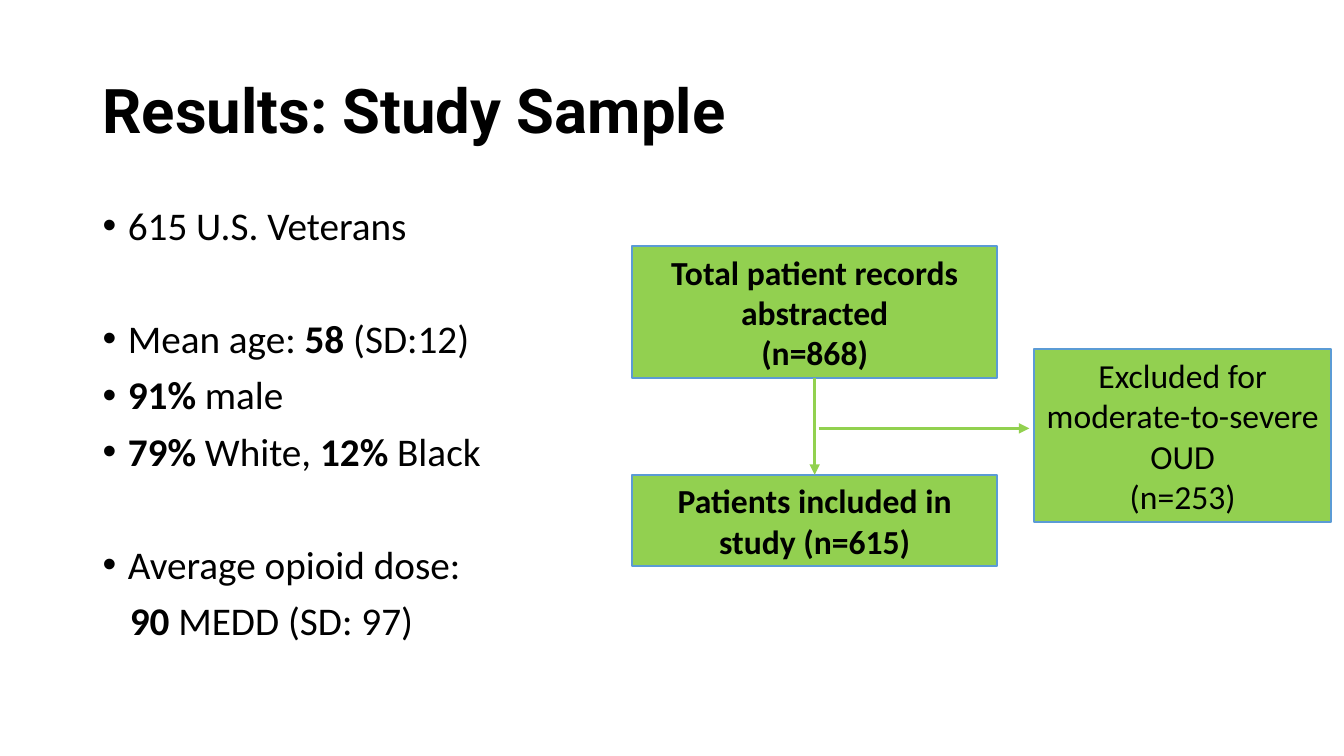
"""Build the study sample slide with its findings and patient flow diagram."""
from dataclasses import dataclass

import lxml.etree
import pptx
import pptx.dml.color
import pptx.enum.shapes
import pptx.enum.text
import pptx.oxml
import pptx.oxml.ns
import pptx.shapes.autoshape
import pptx.shapes.connector
import pptx.slide
import pptx.text.text
import pptx.util

Inches = pptx.util.Inches
Pt = pptx.util.Pt
RGBColor = pptx.dml.color.RGBColor


@dataclass(frozen=True)
class Theme:
    """Colours, fonts and type sizes of the slide."""
    text: RGBColor = RGBColor(0, 0, 0)
    box_fill: RGBColor = RGBColor(0x92, 0xD0, 0x50)
    box_line: RGBColor = RGBColor(0x5B, 0x9B, 0xD5)
    arrow: RGBColor = RGBColor(0x92, 0xD1, 0x4F)
    title_font: str = "Roboto"
    body_font: str = "Calibri"
    title_size: float = 44
    body_size: float = 28
    box_size: float = 24
    line_spacing: float = 0.9


@dataclass(frozen=True)
class Frame:
    """Position and size in inches."""
    left: float
    top: float
    width: float
    height: float


@dataclass(frozen=True)
class Finding:
    """A finding whose bold parts stand between asterisks."""
    text: str
    space_before: float = 10
    indent: float = 0.25
    bulleted: bool = True


@dataclass(frozen=True)
class FlowBox:
    """A box of the patient flow diagram."""
    lines: tuple[str, ...]
    frame: Frame
    bold: bool = True


THEME = Theme()
TITLE_FRAME = Frame(0.92, 0.4, 11.5, 1.45)
FINDINGS_FRAME = Frame(0.92, 2, 5.07, 4.76)
GROUP_GAP = 50.5
FINDINGS = (
    Finding("615 U.S. Veterans", space_before=0),
    Finding("Mean age: *58* (SD:12)", space_before=GROUP_GAP),
    Finding("*91%* male"),
    Finding("*79%* White, *12%* Black"),
    Finding("Average opioid dose:", space_before=GROUP_GAP),
    Finding("*90* MEDD (SD: 97)", indent=0.27, bulleted=False),
)
TOTAL = FlowBox(("Total patient records abstracted", "(n=868)"), Frame(6.27, 2.44, 3.62, 1.31))
INCLUDED = FlowBox(("Patients included in study (n=615)",), Frame(6.27, 4.71, 3.62, 0.91))
EXCLUDED = FlowBox(("Excluded for moderate-to-severe OUD", "(n=253)"),
                   Frame(10.26, 3.46, 2.94, 1.72), bold=False)


def place(frame: Frame) -> tuple[pptx.util.Length, ...]:
    """Return the frame as lengths."""
    return tuple(Inches(value) for value in (frame.left, frame.top, frame.width, frame.height))


def set_font(paragraph: pptx.text.text._Paragraph, name: str, size: float,
             bold: bool | None = None) -> None:
    """Set the font that all runs of a paragraph share."""
    paragraph.font.name = name
    paragraph.font.size = Pt(size)
    paragraph.font.color.rgb = THEME.text
    paragraph.font.bold = bold


def add_text_frame(slide: pptx.slide.Slide, frame: Frame) -> pptx.text.text.TextFrame:
    """Add a wrapping text box and return its text frame."""
    text_frame = slide.shapes.add_textbox(*place(frame)).text_frame
    text_frame.word_wrap = True
    return text_frame


def add_title(slide: pptx.slide.Slide, text: str) -> None:
    """Add the slide title."""
    text_frame = add_text_frame(slide, TITLE_FRAME)
    text_frame.vertical_anchor = pptx.enum.text.MSO_ANCHOR.MIDDLE
    paragraph = text_frame.paragraphs[0]
    paragraph.text = text
    paragraph.line_spacing = THEME.line_spacing
    set_font(paragraph, THEME.title_font, THEME.title_size, bold=True)


def add_findings(slide: pptx.slide.Slide) -> None:
    """Add the list of findings."""
    text_frame = add_text_frame(slide, FINDINGS_FRAME)
    for index, finding in enumerate(FINDINGS):
        paragraph = text_frame.add_paragraph() if index else text_frame.paragraphs[0]
        paragraph.line_spacing = THEME.line_spacing
        paragraph.space_before = Pt(finding.space_before)
        properties = paragraph._p.get_or_add_pPr()
        properties.set("marL", str(Inches(finding.indent)))
        if finding.bulleted:
            properties.set("indent", str(-Inches(finding.indent)))
            for tag, attribute, value in (("a:buFont", "typeface", "Arial"),
                                          ("a:buChar", "char", "•")):
                element = lxml.etree.SubElement(properties, pptx.oxml.ns.qn(tag))
                element.set(attribute, value)
        set_font(paragraph, THEME.body_font, THEME.body_size)
        for position, part in enumerate(finding.text.split("*")):
            if part:
                run = paragraph.add_run()
                run.text = part
                run.font.bold = position % 2 == 1


def add_flow_box(slide: pptx.slide.Slide, box: FlowBox) -> pptx.shapes.autoshape.Shape:
    """Add one box of the flow diagram."""
    shape = slide.shapes.add_shape(pptx.enum.shapes.MSO_SHAPE.RECTANGLE, *place(box.frame))
    shape.shadow.inherit = False
    shape.fill.solid()
    shape.fill.fore_color.rgb = THEME.box_fill
    shape.line.color.rgb = THEME.box_line
    shape.line.width = Pt(1.5)
    shape.text_frame.word_wrap = True
    shape.text_frame.text = "\n".join(box.lines)
    for paragraph in shape.text_frame.paragraphs:
        paragraph.alignment = pptx.enum.text.PP_ALIGN.CENTER
        set_font(paragraph, THEME.body_font, THEME.box_size, box.bold)
    return shape


def add_arrow(slide: pptx.slide.Slide, start: tuple[float, float],
              end: tuple[float, float]) -> pptx.shapes.connector.Connector:
    """Add a straight arrow between two points."""
    connector = slide.shapes.add_connector(
        pptx.enum.shapes.MSO_CONNECTOR.STRAIGHT, *(Inches(value) for value in start + end))
    connector.line.color.rgb = THEME.arrow
    connector.line.width = Pt(2.5)
    head = lxml.etree.SubElement(connector.line._get_or_add_ln(), pptx.oxml.ns.qn("a:tailEnd"))
    head.set("type", "triangle")
    lxml.etree.SubElement(connector._element.spPr, pptx.oxml.ns.qn("a:effectLst"))
    return connector


def main() -> None:
    """Build and save the presentation."""
    presentation = pptx.Presentation()
    presentation.slide_width = Inches(13.33)
    presentation.slide_height = Inches(7.5)
    slide = presentation.slides.add_slide(presentation.slide_layouts[6])
    add_title(slide, "Results: Study Sample")
    add_findings(slide)
    total, included, _ = [add_flow_box(slide, box) for box in (TOTAL, INCLUDED, EXCLUDED)]
    down = add_arrow(slide, (8.08, 3.75), (8.08, 4.71))
    down.begin_connect(total, 2)
    down.end_connect(included, 0)
    add_arrow(slide, (8.12, 4.25), (10.21, 4.25))
    presentation.save("out.pptx")


if __name__ == "__main__":
    main()
